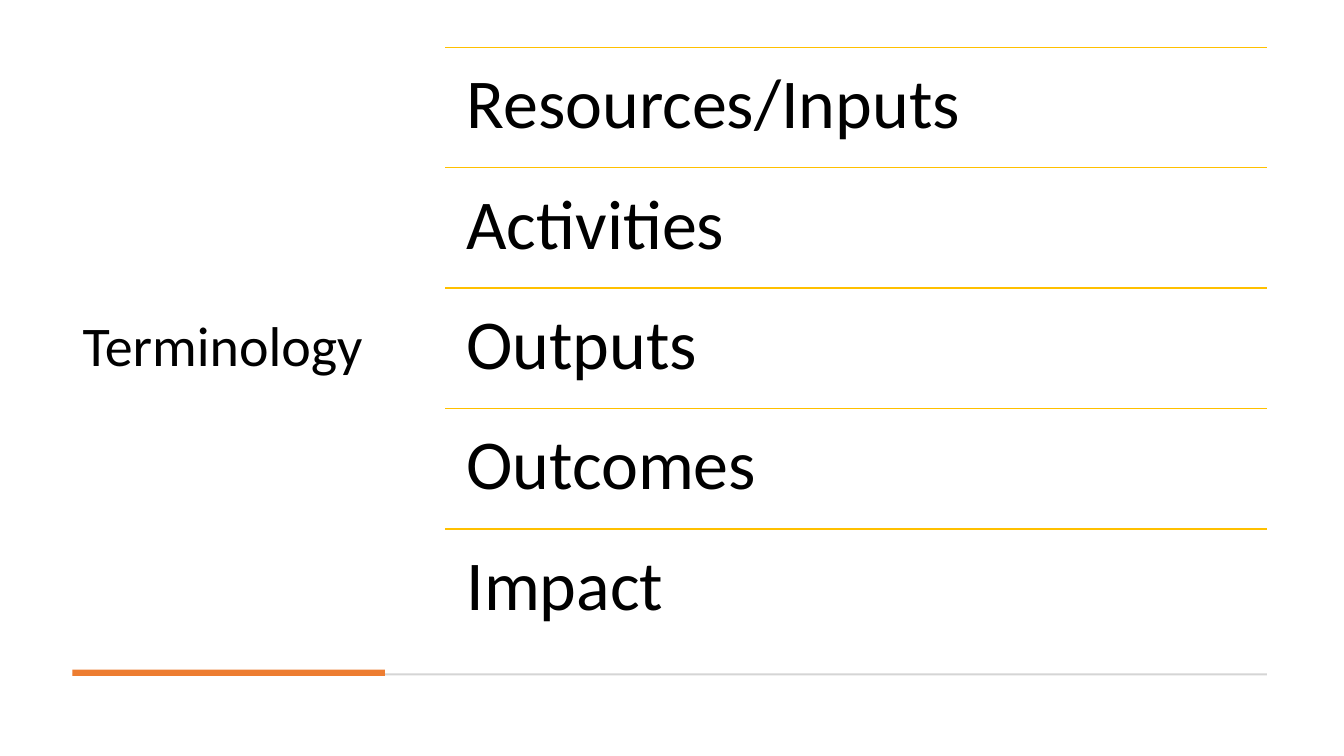
import pptx
import pptx.util
import pptx.dml.color
import pptx.enum.shapes
import pptx.enum.text
import pptx.oxml

Pt = pptx.util.Pt
RGB = pptx.dml.color.RGBColor
BLACK = RGB(0x00, 0x00, 0x00)
GRAY = RGB(0xD5, 0xD5, 0xD5)
ORANGE = RGB(0xED, 0x7D, 0x31)
GOLD = RGB(0xFF, 0xC0, 0x00)

LEFT, TOP, RIGHT = 51.8, 33.8, 905
LIST, ROW = 318.2, 86
SIDE = 223.2


def write(box, text, size, anchor, inset):
    frame = box.text_frame
    frame.word_wrap = True
    frame.auto_size = pptx.enum.text.MSO_AUTO_SIZE.NONE
    frame.vertical_anchor = anchor
    frame.margin_left = frame.margin_right = Pt(inset)
    frame.margin_top = frame.margin_bottom = Pt(min(inset, size * 0.3))
    para = frame.paragraphs[0]
    para.alignment = pptx.enum.text.PP_ALIGN.LEFT
    para.line_spacing = 0.9
    run = para.add_run()
    run.text = text
    run.font.size = Pt(size)
    run.font.name = "Calibri"
    run.font.color.rgb = BLACK


deck = pptx.Presentation()
deck.slide_width, deck.slide_height = Pt(960), Pt(540)
slide = deck.slides.add_slide(deck.slide_layouts[5])
shapes = slide.shapes

# Title at the left
title = shapes.title
title.left, title.top = Pt(LEFT), Pt(TOP)
title.width, title.height = Pt(SIDE), Pt(5 * ROW)
write(title, "Terminology", size=40,
      anchor=pptx.enum.text.MSO_ANCHOR.MIDDLE, inset=7.2)

# Gray rule with an orange bar at the foot
for top, width, height, color in [(481, RIGHT - LEFT, 1.4, GRAY),
                                  (478.3, SIDE, 4.5, ORANGE)]:
    bar = shapes.add_shape(pptx.enum.shapes.MSO_SHAPE.RECTANGLE,
                           Pt(LEFT), Pt(top), Pt(width), Pt(height))
    bar.shadow.inherit = False
    bar.fill.solid()
    bar.fill.fore_color.rgb = color
    bar.line.fill.background()

# Terms, each under a gold line
terms = ["Resources/Inputs", "Activities", "Outputs", "Outcomes", "Impact"]
for i, term in enumerate(terms):
    y = TOP + i * ROW
    line = shapes.add_connector(pptx.enum.shapes.MSO_CONNECTOR.STRAIGHT,
                                Pt(LIST), Pt(y), Pt(RIGHT), Pt(y))
    line.line.color.rgb = GOLD
    line.line.width = Pt(1)
    props = line.element.spPr
    props.append(pptx.oxml.parse_xml(
        '<a:effectLst xmlns:a="http://schemas.openxmlformats.org/drawingml/2006/main"/>'))
    box = shapes.add_textbox(Pt(LIST), Pt(y), Pt(RIGHT - LIST), Pt(ROW))
    write(box, term, size=50, anchor=pptx.enum.text.MSO_ANCHOR.TOP, inset=15)

deck.save("out.pptx")
